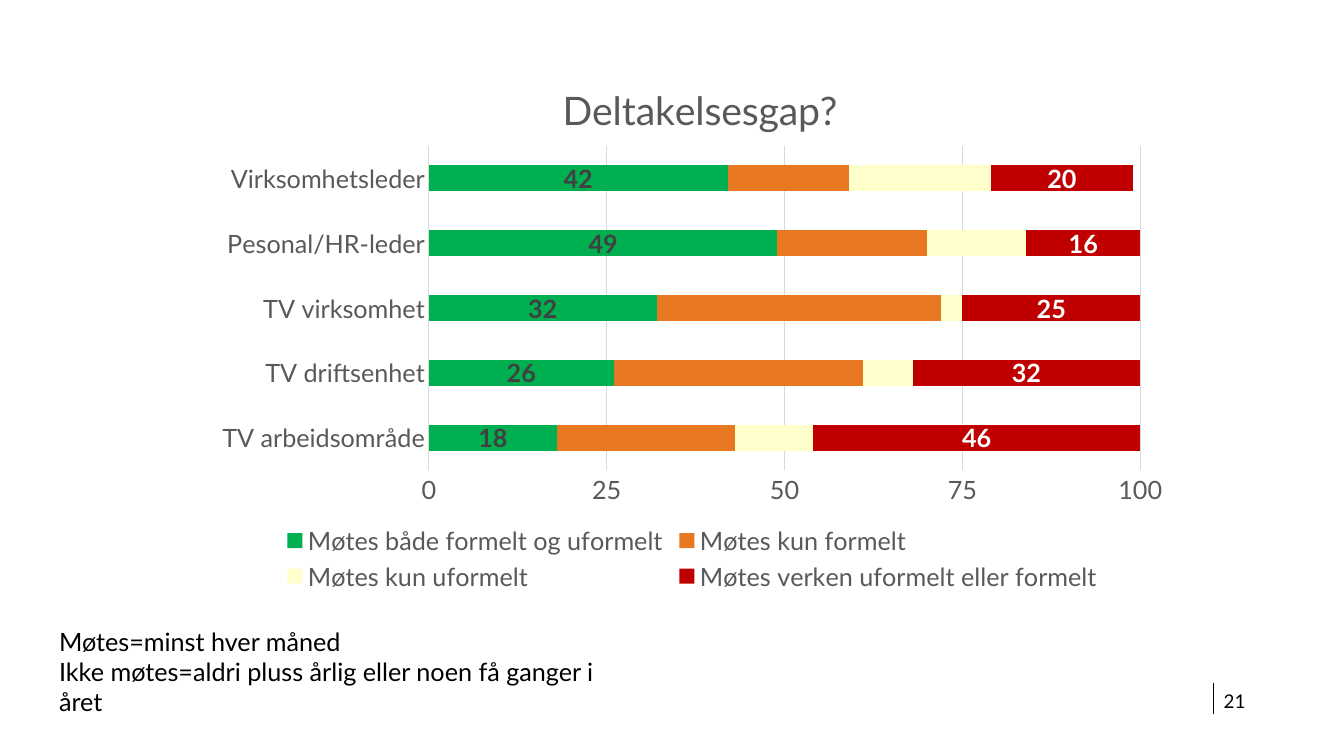
from pptx import Presentation
from pptx.chart.data import CategoryChartData
from pptx.dml.color import RGBColor
from pptx.enum.chart import XL_CHART_TYPE, XL_LEGEND_POSITION, XL_TICK_MARK
from pptx.enum.shapes import MSO_CONNECTOR
from pptx.enum.text import MSO_ANCHOR
from pptx.oxml import parse_xml
from pptx.oxml.ns import nsdecls, qn
from pptx.util import Cm, Pt

BLACK, GREY, LIGHT, DARK, WHITE = "000000", "595959", "D9D9D9", "404040", "FFFFFF"

ROLES = ["TV arbeidsområde", "TV driftsenhet", "TV virksomhet",
         "Pesonal/HR-leder", "Virksomhetsleder"]
# Name, values, bar colour, label colour
MEETINGS = [
    ("Møtes både formelt og uformelt", (18, 26, 32, 49, 42), "00B050", DARK),
    ("Møtes kun formelt", (25, 35, 40, 21, 17), "E87722", None),
    ("Møtes kun uformelt", (11, 7, 3, 14, 20), "FFFFCC", None),
    ("Møtes verken uformelt eller formelt", (46, 32, 25, 16, 20), "C00000", WHITE),
]


def rgb(value):
    return RGBColor.from_string(value)


class SlideBuilder:
    font_name = "Lato"

    def __init__(self, slide):
        self.slide = slide

    def style(self, font, size, color, bold=False):
        font.name, font.size, font.bold = self.font_name, Pt(size), bold
        font.color.rgb = rgb(color)

    def stroke(self, line, color):
        line.color.rgb = rgb(color)
        line.width = Pt(0.75)

    def text(self, box, lines, size, margins=None, anchor=MSO_ANCHOR.TOP):
        sp = self.slide.shapes.add_textbox(*map(Cm, box))
        tf = sp.text_frame
        tf.word_wrap = True
        tf.vertical_anchor = anchor
        if margins is not None:
            tf.margin_left = tf.margin_right = Cm(margins)
            tf.margin_top = tf.margin_bottom = Cm(margins)
        tf.text = "\n".join(lines)
        for p in tf.paragraphs:
            for r in p.runs:
                self.style(r.font, size, BLACK)

    def line(self, x1, y1, x2, y2):
        cxn = self.slide.shapes.add_connector(
            MSO_CONNECTOR.STRAIGHT, *map(Cm, (x1, y1, x2, y2)))
        self.stroke(cxn.line, BLACK)
        cxn._element.spPr.append(parse_xml(f"<a:effectLst {nsdecls('a')}/>"))

    def place(self, element, index, target="", **fractions):
        """Give a chart part a fixed place, in fractions of the chart."""
        for old in element.findall(qn("c:layout")):
            element.remove(old)
        inner = f'<c:layoutTarget val="{target}"/>' if target else ""
        inner += '<c:xMode val="edge"/><c:yMode val="edge"/>'
        inner += "".join(f'<c:{k} val="{v}"/>' for k, v in fractions.items())
        element.insert(index, parse_xml(
            f"<c:layout {nsdecls('c')}><c:manualLayout>{inner}"
            "</c:manualLayout></c:layout>"))

    def stacked_bars(self, box, title, categories, series):
        data = CategoryChartData(number_format="0")
        data.categories = categories
        for name, values, *_ in series:
            data.add_series(name, values)
        chart = self.slide.shapes.add_chart(
            XL_CHART_TYPE.BAR_STACKED, *map(Cm, box), data).chart
        self.style(chart.font, 18, BLACK)

        # Title and legend
        chart.has_title = True
        tf = chart.chart_title.text_frame
        tf.text = title
        self.style(tf.paragraphs[0].runs[0].font, 28, GREY)
        chart.chart_title.include_in_layout = False
        self.place(chart.chart_title._element, 1, x=0.36, y=0.05)
        chart.has_legend = True
        chart.legend.position = XL_LEGEND_POSITION.BOTTOM
        chart.legend.include_in_layout = False
        self.style(chart.legend.font, 18, GREY)

        # Axes
        cat, val = chart.category_axis, chart.value_axis
        for axis in (cat, val):
            axis.major_tick_mark = axis.minor_tick_mark = XL_TICK_MARK.NONE
            self.style(axis.tick_labels.font, 18, GREY)
        self.stroke(cat.format.line, LIGHT)
        val.format.line.fill.background()
        val.minimum_scale, val.maximum_scale, val.major_unit = 0, 100, 25
        val.has_major_gridlines = True
        self.stroke(val.major_gridlines.format.line, LIGHT)

        # Bars and labels
        plot = chart.plots[0]
        plot.gap_width, plot.overlap = 150, 100
        plot.vary_by_categories = False
        for ser, (_, _, color, label_color) in zip(plot.series, series):
            ser.format.fill.solid()
            ser.format.fill.fore_color.rgb = rgb(color)
            if label_color:
                ser.data_labels.show_value = True
                self.style(ser.data_labels.font, 18, label_color, bold=True)
        self.place(plot._element.getparent(), 0, "inner",
                   x=0.23, y=0.18, w=0.73, h=0.59)


def main():
    prs = Presentation()
    prs.slide_width, prs.slide_height = Cm(33.87), Cm(19.05)
    s = SlideBuilder(prs.slides.add_slide(prs.slide_layouts[6]))

    # Page number with its rule
    s.line(30.58, 17.2, 30.58, 17.98)
    s.text((30.84, 17.42, 3.03, 0.48), ["21"], 13.5, 0, MSO_ANCHOR.MIDDLE)

    # Chart
    s.stacked_bars((5.16, 1.19, 24.56, 13.84), "Deltakelsesgap?", ROLES, MEETINGS)

    # Definitions
    s.text((1.24, 15.65, 14.81, 1.8),
           ["Møtes=minst hver måned",
            "Ikke møtes=aldri pluss årlig eller noen få ganger i året"], 18)

    prs.save("out.pptx")


if __name__ == "__main__":
    main()
